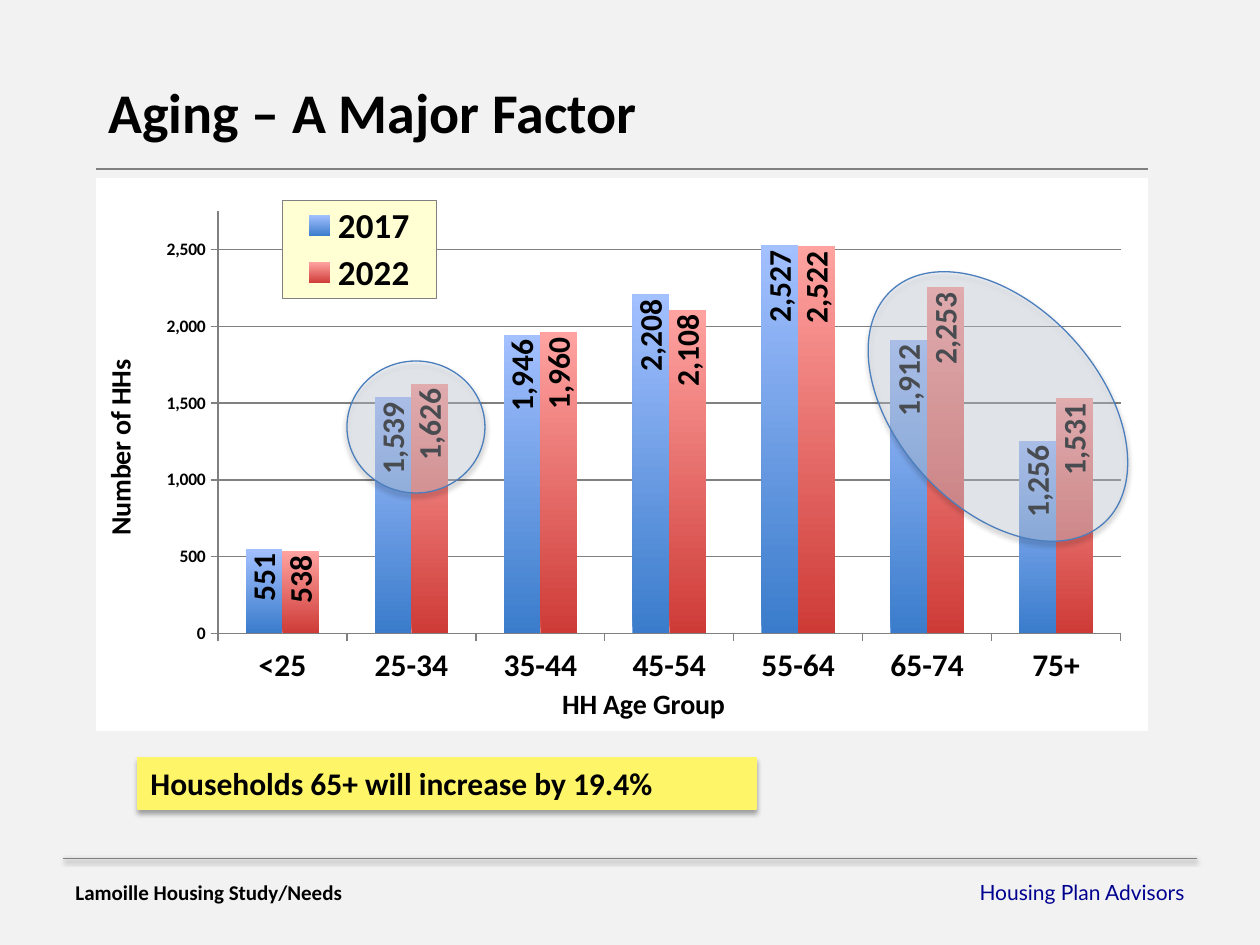
from dataclasses import dataclass

from lxml import etree
from pptx import Presentation
from pptx.chart.data import CategoryChartData
from pptx.dml.color import RGBColor
from pptx.enum.chart import XL_CHART_TYPE, XL_LABEL_POSITION, XL_LEGEND_POSITION, XL_TICK_MARK
from pptx.enum.shapes import MSO_CONNECTOR, MSO_SHAPE
from pptx.enum.text import PP_ALIGN
from pptx.oxml import parse_xml
from pptx.oxml.ns import nsdecls, qn
from pptx.util import Emu, Pt

COLUMNS = XL_CHART_TYPE.COLUMN_CLUSTERED
INSIDE_END = XL_LABEL_POSITION.INSIDE_END
LEGEND_RIGHT = XL_LEGEND_POSITION.RIGHT
TICK_OUT, TICK_NONE = XL_TICK_MARK.OUTSIDE, XL_TICK_MARK.NONE
STRAIGHT = MSO_CONNECTOR.STRAIGHT
RECTANGLE, ELLIPSE = MSO_SHAPE.RECTANGLE, MSO_SHAPE.OVAL
LEFT, RIGHT = PP_ALIGN.LEFT, PP_ALIGN.RIGHT

BLACK = RGBColor(0x00, 0x00, 0x00)
WHITE = RGBColor(0xFF, 0xFF, 0xFF)
GRAY = RGBColor(0x80, 0x80, 0x80)
PAPER = RGBColor(0xF2, 0xF2, 0xF2)
NAVY = RGBColor(0x00, 0x00, 0x90)
YELLOW = RGBColor(0xFF, 0xF5, 0x69)
LEGEND_FILL = RGBColor(0xFF, 0xFF, 0xD3)
PALE_BLUE = RGBColor(0xDC, 0xE6, 0xF2)
OUTLINE_BLUE = RGBColor(0x4B, 0x7E, 0xBC)
BLUE_LOW, BLUE_HIGH = RGBColor(0x3A, 0x7C, 0xCB), RGBColor(0xA3, 0xC0, 0xFF)
RED_LOW, RED_HIGH = RGBColor(0xCE, 0x3B, 0x37), RGBColor(0xFF, 0xA3, 0xA1)

PX_PER_INCH = 126
FONT = "Calibri"
UPRIGHT = "-5400000"


@dataclass(frozen=True)
class Box:
    left: int
    top: int
    width: int
    height: int


@dataclass(frozen=True)
class Label:
    text: str
    box: Box
    size: int
    color: RGBColor = BLACK
    font: str = FONT
    bold: bool = True
    align: PP_ALIGN = LEFT


@dataclass(frozen=True)
class Panel:
    kind: MSO_SHAPE
    box: Box
    fill: RGBColor
    line: RGBColor
    opacity: int = 100
    rotation: float = 0


@dataclass(frozen=True)
class AgeSeries:
    name: str
    values: tuple[int, ...]
    low: RGBColor
    high: RGBColor


AGE_GROUPS = ("<25", "25-34", "35-44", "45-54", "55-64", "65-74", "75+")
SERIES = (
    AgeSeries("2017", (551, 1539, 1946, 2208, 2527, 1912, 1256), BLUE_LOW, BLUE_HIGH),
    AgeSeries("2022", (538, 1626, 1960, 2108, 2522, 2253, 1531), RED_LOW, RED_HIGH),
)
CHART_BOX = Box(96, 178, 1052, 553)
CALLOUT = Panel(RECTANGLE, Box(138, 758, 618, 51), YELLOW, YELLOW)
HIGHLIGHTS = (
    Panel(ELLIPSE, Box(897, 249, 202, 315), PALE_BLUE, OUTLINE_BLUE, 33, 317.6),
    Panel(ELLIPSE, Box(347, 361, 138, 132), PALE_BLUE, OUTLINE_BLUE, 33),
)
FOOTERS = (
    Label("Housing Plan Advisors", Box(824, 873, 373, 38), 12, NAVY, "Lato", False, RIGHT),
    Label("Lamoille Housing Study/Needs", Box(63, 873, 373, 38), 12),
)
TITLE = Label("Aging – A Major Factor", Box(96, 71, 1003, 81), 32)
MESSAGE = Label("Households 65+ will increase by 19.4%", Box(138, 758, 650, 51), 18)


def px(length: int) -> Emu:
    return Emu(round(length * 914400 / PX_PER_INCH))


def place(box: Box) -> tuple[Emu, ...]:
    return px(box.left), px(box.top), px(box.width), px(box.height)


def add_shadow(effects, opacity: int, distance: float) -> None:
    effects.append(parse_xml(
        f'<a:outerShdw {nsdecls("a")} blurRad="{Pt(3.1)}" dist="{Pt(distance)}" dir="5400000"'
        f' rotWithShape="0"><a:srgbClr val="000000"><a:alpha val="{opacity * 1000}"/>'
        '</a:srgbClr></a:outerShdw>'))


def add_label(slide, label: Label) -> None:
    frame = slide.shapes.add_textbox(*place(label.box)).text_frame
    frame.word_wrap = True
    para = frame.paragraphs[0]
    para.alignment = label.align
    span = para.add_run()
    span.text = label.text
    style_font(span.font, label.size, label.bold, label.color, label.font)


def style_font(font, size: int, bold: bool = True, color: RGBColor = BLACK, name: str = FONT) -> None:
    font.name, font.size, font.bold = name, Pt(size), bold
    font.color.rgb = color


def add_panel(slide, panel: Panel) -> None:
    shape = slide.shapes.add_shape(panel.kind, *place(panel.box))
    shape.rotation = panel.rotation
    shape.fill.solid()
    shape.fill.fore_color.rgb = panel.fill
    shape.line.color.rgb = panel.line
    shape.line.width = Pt(0.75)
    shape.shadow.inherit = False
    properties = shape._element.spPr
    add_shadow(properties.find(qn("a:effectLst")), 35, 1.8)
    if panel.opacity < 100:
        color = properties.find(qn("a:solidFill"))[0]
        etree.SubElement(color, qn("a:alpha")).set("val", str(panel.opacity * 1000))


def add_rule(slide, left: int, right: int, y: int, width: float, shadow: bool = False) -> None:
    rule = slide.shapes.add_connector(STRAIGHT, px(left), px(y), px(right), px(y))
    rule.line.color.rgb = GRAY
    rule.line.width = Pt(width)
    effects = etree.SubElement(rule._element.spPr, qn("a:effectLst"))
    if shadow:
        add_shadow(effects, 38, 1.6)


def set_layout(parent, index: int, target: str, x: float, y: float, w: float, h: float) -> None:
    for old in parent.findall(qn("c:layout")):
        parent.remove(old)
    parent.insert(index, parse_xml(
        f'<c:layout {nsdecls("c")}><c:manualLayout>{target}'
        '<c:xMode val="edge"/><c:yMode val="edge"/>'
        f'<c:x val="{x}"/><c:y val="{y}"/><c:w val="{w}"/><c:h val="{h}"/>'
        '</c:manualLayout></c:layout>'))


def fill_area(parent, fill: RGBColor, line: str) -> None:
    parent.find(qn("c:txPr")).addprevious(parse_xml(
        f'<c:spPr {nsdecls("c", "a")}><a:solidFill><a:srgbClr val="{fill}"/></a:solidFill>'
        f'<a:ln w="6350">{line}</a:ln></c:spPr>'))


def style_axis(axis, title: str, size: int) -> None:
    axis.major_tick_mark, axis.minor_tick_mark = TICK_OUT, TICK_NONE
    axis.format.line.color.rgb = GRAY
    style_font(axis.tick_labels.font, size)
    span = axis.axis_title.text_frame.paragraphs[0].add_run()
    span.text = title
    style_font(span.font, 16)


def add_age_chart(slide) -> None:
    data = CategoryChartData(number_format="#,##0")
    data.categories = AGE_GROUPS
    for series in SERIES:
        data.add_series(series.name, series.values)
    chart = slide.shapes.add_chart(COLUMNS, *place(CHART_BOX), data).chart
    chart.has_title = False
    style_font(chart.font, 10, False)
    fill_area(chart._chartSpace, WHITE, "<a:noFill/>")
    inner = '<c:layoutTarget val="inner"/>'
    set_layout(chart._chartSpace.chart.plotArea, 0, inner, 0.116, 0.06, 0.858, 0.764)

    # Axes
    style_axis(chart.category_axis, "HH Age Group", 18)
    values = chart.value_axis
    style_axis(values, "Number of HHs", 10)
    values.axis_title.text_frame._txBody.bodyPr.set("rot", UPRIGHT)
    values.minimum_scale, values.maximum_scale, values.major_unit = 0, 2750, 500
    values.tick_labels.number_format = "#,##0"
    values.tick_labels.number_format_is_linked = False
    values.major_gridlines.format.line.color.rgb = GRAY

    # Columns and their upright labels
    plot = chart.plots[0]
    plot.gap_width, plot.overlap, plot.vary_by_categories = 150, 0, False
    for column, series in zip(plot.series, SERIES):
        fill = column.format.fill
        fill.gradient()
        fill.gradient_angle = 90
        for stop, color in zip(fill.gradient_stops, (series.low, series.high)):
            stop.color.rgb = color
        labels = column.data_labels
        labels.show_value, labels.position = True, INSIDE_END
        labels.number_format, labels.number_format_is_linked = "#,##0", False
        style_font(labels.font, 18)
        body = labels._element.find(qn("c:txPr")).find(qn("a:bodyPr"))
        body.set("rot", UPRIGHT)
        body.set("vert", "horz")

    # Legend
    chart.has_legend = True
    legend = chart.legend
    legend.position, legend.include_in_layout = LEGEND_RIGHT, False
    style_font(legend.font, 20)
    set_layout(legend._element, 1, "", 0.177, 0.04, 0.147, 0.178)
    fill_area(legend._element, LEGEND_FILL, f'<a:solidFill><a:srgbClr val="{GRAY}"/></a:solidFill>')


def main() -> None:
    deck = Presentation()
    deck.slide_width, deck.slide_height = px(1260), px(945)
    page = deck.slides.add_slide(deck.slide_layouts[6])
    page.background.fill.solid()
    page.background.fill.fore_color.rgb = PAPER

    # Footer
    add_rule(page, 63, 1197, 858, 0.5, shadow=True)
    for footer in FOOTERS:
        add_label(page, footer)

    # Title, chart and highlights
    add_panel(page, CALLOUT)
    add_label(page, TITLE)
    add_rule(page, 96, 1148, 169, 1)
    add_age_chart(page)
    for highlight in HIGHLIGHTS:
        add_panel(page, highlight)
    add_label(page, MESSAGE)

    deck.save("out.pptx")


if __name__ == "__main__":
    main()
